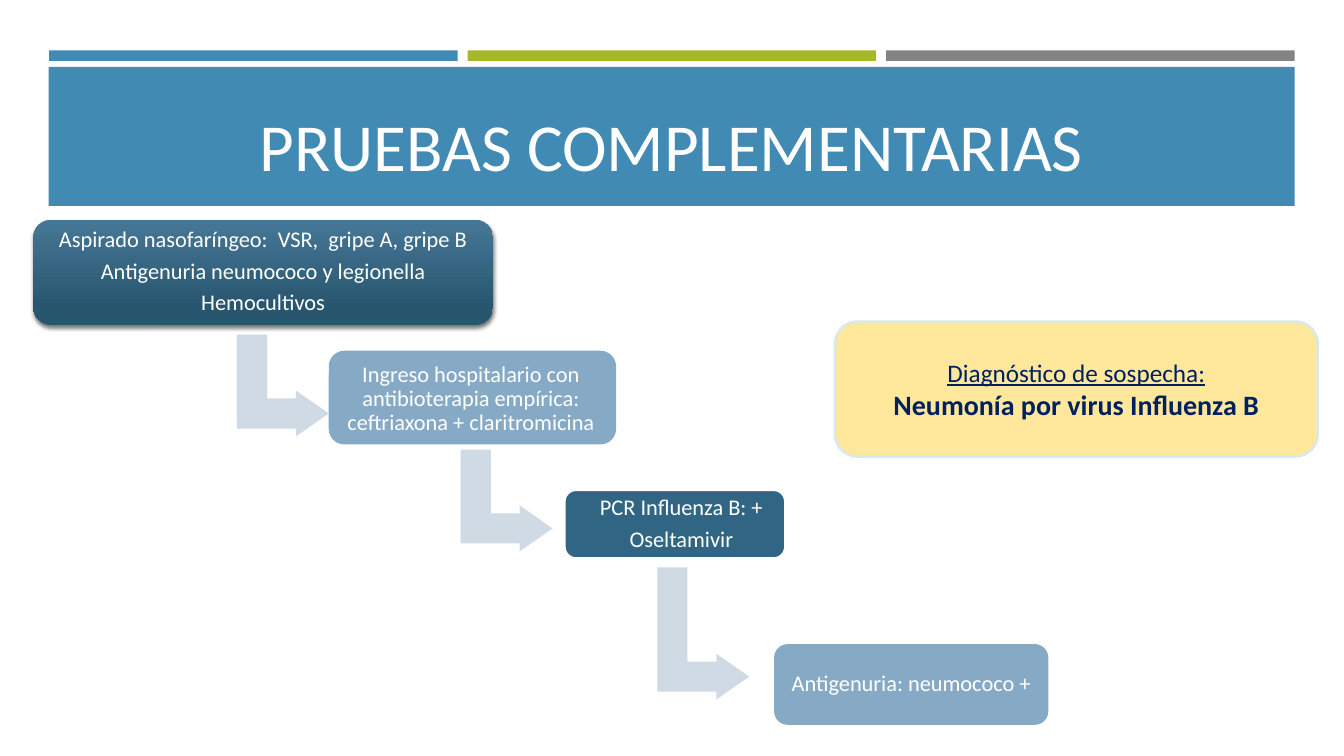
from dataclasses import dataclass

from lxml import etree
from pptx import Presentation
from pptx.dml.color import RGBColor
from pptx.enum.shapes import MSO_SHAPE
from pptx.enum.text import MSO_ANCHOR, PP_ALIGN
from pptx.oxml.ns import qn
from pptx.util import Inches, Pt

RECTANGLE = MSO_SHAPE.RECTANGLE
ROUNDED = MSO_SHAPE.ROUNDED_RECTANGLE
BENT_ARROW = MSO_SHAPE.BENT_UP_ARROW
CENTER = PP_ALIGN.CENTER
MIDDLE, BOTTOM = MSO_ANCHOR.MIDDLE, MSO_ANCHOR.BOTTOM

WIDTH, HEIGHT = Inches(13.33), Inches(7.5)


@dataclass(frozen=True)
class Theme:
    font: str = "Calibri"
    title_size: int = 48
    step_size: int = 16
    label_size: int = 18
    diagnosis_size: int = 20
    white: str = "FFFFFF"
    blue: str = "418AB3"
    green: str = "A6B727"
    gray: str = "838383"
    gradient: tuple = (("467796", 0), ("28566F", 0.84))
    dark_step: str = "306684"
    light_step: str = "86AAC5"
    arrow: str = "CFDAE5"
    diagnosis_fill: str = "FFE79B"
    diagnosis_line: str = "D8E8F1"
    diagnosis_text: str = "002060"
    shadow: str = "000000"


THEME = Theme()
STEP_INSETS = (0.53, 0.93, 0.53, 0.93)


def across(percent):
    return round(WIDTH * percent / 100)


def down(percent):
    return round(HEIGHT * percent / 100)


def add_block(slide, kind, box, fill=None, line=None):
    """Add a flat shape; box is left, top, width, height in percent of the slide."""
    left, top, width, height = box
    shape = slide.shapes.add_shape(
        kind, across(left), down(top), across(width), down(height))
    shape.shadow.inherit = False
    if fill:
        shape.fill.solid()
        shape.fill.fore_color.rgb = RGBColor.from_string(fill)
    if line:
        shape.line.color.rgb = RGBColor.from_string(line)
        shape.line.width = Pt(1.75)
    else:
        shape.line.fill.background()
    return shape


def write(shape, lines, size, color, anchor=MIDDLE, insets=None):
    """Fill the shape with centred paragraphs; insets are left, top, right, bottom in percent."""
    frame = shape.text_frame
    frame.word_wrap = True
    frame.vertical_anchor = anchor
    if insets:
        left, top, right, bottom = insets
        frame.margin_left, frame.margin_right = across(left), across(right)
        frame.margin_top, frame.margin_bottom = down(top), down(bottom)
    frame.text = "\n".join(lines)
    for paragraph in frame.paragraphs:
        paragraph.alignment = CENTER
        paragraph.font.name = THEME.font
        paragraph.font.size = Pt(size)
        paragraph.font.color.rgb = RGBColor.from_string(color)
    return frame.paragraphs


def add_step(slide, box, lines, fill=None, line=None, insets=STEP_INSETS):
    shape = add_block(slide, ROUNDED, box, fill, line)
    for paragraph in write(shape, lines, THEME.step_size, THEME.white, insets=insets):
        paragraph.line_spacing = 0.9
        paragraph.space_after = Pt(5.3)
    return shape


def add_turn_arrow(slide, left, top, height):
    """Add an arrow that runs down and then right; the box is the one seen after rotation."""
    width = 6.83
    shape = add_block(slide, BENT_ARROW, (left, top, width, height), THEME.arrow)
    center_x, center_y = shape.left + shape.width // 2, shape.top + shape.height // 2
    shape.width, shape.height = shape.height, shape.width
    shape.left, shape.top = center_x - shape.width // 2, center_y - shape.height // 2
    shape.rotation = 90
    for index, value in enumerate((0.328, 0.25, 0.358)):
        shape.adjustments[index] = value


def shade(shape):
    """Give the shape a downward gradient and a soft shadow below it."""
    shape.fill.gradient()
    shape.fill.gradient_angle = 270
    for stop, (color, position) in zip(shape.fill.gradient_stops, THEME.gradient):
        stop.color.rgb = RGBColor.from_string(color)
        stop.position = position
    effects = shape._element.spPr.find(qn("a:effectLst"))
    shadow = etree.SubElement(
        effects, qn("a:outerShdw"), blurRad=str(Pt(3)), dist=str(Pt(2)),
        dir="5400000", algn="ctr", rotWithShape="0")
    color = etree.SubElement(shadow, qn("a:srgbClr"), val=THEME.shadow)
    etree.SubElement(color, qn("a:alpha"), val="55000")


def add_header(slide):
    for column, color in enumerate((THEME.blue, THEME.green, THEME.gray)):
        add_block(slide, RECTANGLE, (3.65 + 31.14 * column, 6.67, 30.4, 1.4), color)
    banner = add_block(slide, RECTANGLE, (3.62, 8.85, 92.7, 18.4), THEME.blue)
    write(banner, ["PRUEBAS COMPLEMENTARIAS"], THEME.title_size, THEME.white,
          BOTTOM, (1.8, 2.5, 1.8, 2.8))


def add_process(slide):
    tests = add_step(slide, (2.48, 29.07, 34.2, 13.87), [
        "Aspirado nasofaríngeo:  VSR,  gripe A, gripe B",
        "Antigenuria neumococo y legionella",
        "Hemocultivos"])
    shade(tests)
    for left, top, height in ((17.63, 44.27, 13.47), (34.28, 59.47, 13.47),
                              (48.91, 75.07, 17.47)):
        add_turn_arrow(slide, left, top, height)
    add_step(slide, (42, 64.8, 16.43, 9.07), ["PCR Influenza B: +", "Oseltamivir"],
             THEME.dark_step, THEME.white, (2.1, 0.93, 1.13, 0.93))
    add_step(slide, (24.46, 46.4, 21.38, 12.4),
             ["Ingreso hospitalario con antibioterapia empírica: ceftriaxona + claritromicina"],
             THEME.light_step, insets=(0.19, 0.5, 0.41, 0.1))
    add_step(slide, (57.6, 85.2, 20.4, 10.67), ["Antigenuria: neumococo +"],
             THEME.light_step)


def add_diagnosis(slide):
    panel = add_block(slide, ROUNDED, (62.12, 42.53, 35.93, 17.87),
                      THEME.diagnosis_fill, THEME.diagnosis_line)
    label, diagnosis = write(
        panel, ["Diagnóstico de sospecha:", "Neumonía por virus Influenza B"],
        THEME.label_size, THEME.diagnosis_text)
    label.font.underline = True
    diagnosis.font.size = Pt(THEME.diagnosis_size)
    diagnosis.font.bold = True


def main():
    presentation = Presentation()
    presentation.slide_width, presentation.slide_height = WIDTH, HEIGHT
    slide = presentation.slides.add_slide(presentation.slide_layouts[6])
    add_header(slide)
    add_process(slide)
    add_diagnosis(slide)
    presentation.save("out.pptx")


if __name__ == "__main__":
    main()
